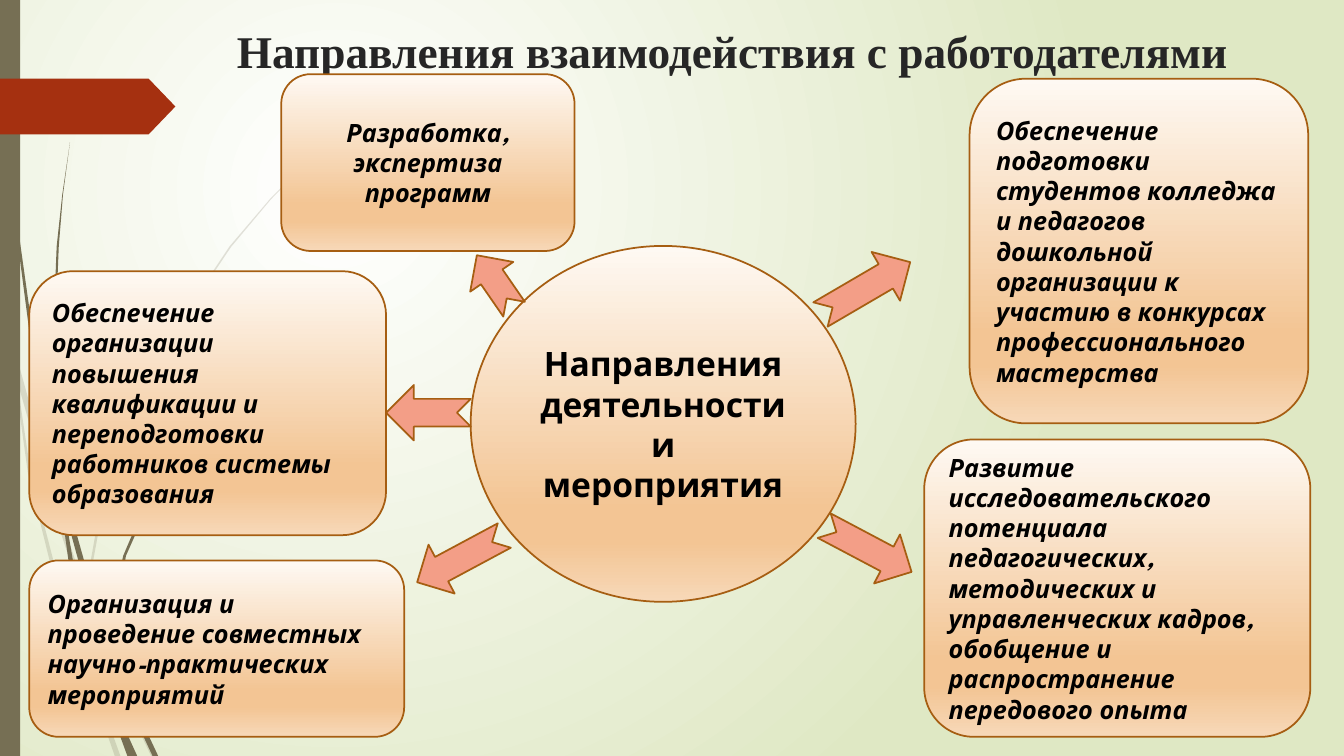
from lxml.etree import SubElement
from pptx import Presentation
from pptx.dml.color import RGBColor as RGB
from pptx.enum.shapes import MSO_SHAPE as Shape
from pptx.enum.text import MSO_ANCHOR as Anchor, PP_ALIGN as Align
from pptx.oxml.ns import qn
from pptx.util import Pt

THEME = {
    "olive": "766F54", "red": "A53010", "salmon": "F39E87", "edge": "A65E12",
    "sky": [(0, "FFFFFF"), (100, "DFE8C4")],
    "peach": [(0, "FEF9F3"), (74, "F3C594"), (83, "F3C594"), (100, "F7D8B8")],
    "head": {"name": "Times New Roman", "size": Pt(32.4), "bold": True},
    "hub": {"name": "League Spartan", "size": Pt(24), "bold": True},
    "card": {"name": "League Spartan", "size": Pt(18), "bold": True, "italic": True},
    "dark": "262626", "ink": "000000", "line": 1.25,
}

# Boxes are left, top, width, height in points.
TITLE = ("Направления взаимодействия с работодателями", (135.4, 13, 775.4, 53.3))
HUB = ("Направления деятельности и мероприятия", (336.2, 175.7, 275, 254.2))
CARDS = [
    ("Обеспечение организации повышения квалификации и переподготовки "
     "работников системы образования", (20.9, 193.7, 254.9, 188.6), Align.LEFT),
    ("Организация и проведение совместных научно-практических мероприятий",
     (20.9, 400.3, 267.8, 126), Align.LEFT),
    ("Развитие исследовательского потенциала педагогических, методических и "
     "управленческих кадров, обобщение и распространение передового опыта",
     (660.2, 313.9, 275.8, 212.4), Align.LEFT),
    ("Обеспечение подготовки студентов колледжа и педагогов дошкольной "
     "организации к участию в конкурсах профессионального мастерства",
     (692.6, 56.2, 241.9, 246.2), Align.LEFT),
    ("Разработка, экспертиза программ", (200.9, 53, 209.5, 126.3), Align.CENTER),
]
ARROWS = [
    ((581, 185.8, 74.2, 40.3), 329.7),
    ((293.8, 379.4, 70.6, 39.6), 151.8),
    ((275.8, 275, 60.5, 39.6), 180),
    ((330.5, 182.9, 46.8, 37.4), 235.4),
    ((584.6, 372.2, 70.6, 39.6), 27.9),
]
BAR = (0, 0, 14.4, 540)
FLAG = (0, 56.2, 125.3, 39.8)

# Outlines of the grass blades, in points.
FAINT = [
    [(0, 203), (6.5, 232), (8, 252), (7, 248), (0, 215)],
    [(8, 252), (20, 338), (47, 447), (66, 499), (73, 514), (82, 540), (86, 540),
     (76, 512), (67, 492), (50, 446), (22, 338), (12, 271)],
    [(10, 248), (12, 271), (42, 376), (60, 431), (63, 439), (89, 500), (108, 540),
     (112, 540), (91, 498), (66, 437), (45, 374)],
    [(60, 431), (63, 465), (67, 492), (76, 512), (66, 465), (63, 439)],
    [(61, 422), (77, 332), (114, 251), (164, 176), (193, 142), (225, 110),
     (193.5, 142.5), (165, 176.5), (115, 251), (79, 333), (63, 420), (63, 429)],
]
SOLID = [
    [(2, 0), (5, 79), (12, 168), (23.5, 256), (40, 343), (41, 346), (39.5, 326),
     (26, 256), (13.5, 167), (6, 78.5), (3, 0)],
    [(43, 340), (46, 364), (63, 426), (76, 464), (80, 472), (95, 510), (109, 540),
     (113, 540), (98, 508), (81, 467), (67, 425)],
    [(41, 343), (49, 401), (67, 474), (80, 510), (91, 540), (98, 540), (88, 518),
     (79, 498), (71, 473), (52, 400), (46, 364)],
    [(43, 340), (42, 326), (39, 251), (42, 176), (45, 139), (50, 101.5),
     (44.5, 139), (40.5, 176), (37.5, 251), (39.5, 323)],
    [(76, 454), (88, 397), (112, 341), (147, 292), (166, 269), (188, 248),
     (166.5, 269.5), (148, 292), (114, 343), (90, 397), (80, 456), (79, 461)],
    [(76, 464), (79, 498), (88, 518), (80, 472), (79, 461), (76, 454)],
]


def blend(fill, node, stops):
    """Give a fill the listed stops, running downwards; return its XML."""
    fill.gradient()
    grad = next(node.iter(qn("a:gradFill")))
    for part in list(grad):
        grad.remove(part)
    row = SubElement(grad, qn("a:gsLst"))
    for pos, tint in stops:
        stop = SubElement(row, qn("a:gs"), pos=str(pos * 1000))
        SubElement(stop, qn("a:srgbClr"), val=tint)
    SubElement(grad, qn("a:lin"), ang="5400000", scaled="0")
    return grad


def glow(slide):
    """Light the background from its upper left."""
    grad = blend(slide.background.fill, slide.element, THEME["sky"])
    grad.remove(grad.find(qn("a:lin")))
    way = SubElement(grad, qn("a:path"), {"path": "circle"})
    SubElement(way, qn("a:fillToRect"), l="50000", t="50000", r="100000", b="100000")


def paint(shape, tint, edge=None):
    shape.shadow.inherit = False
    if isinstance(tint, list):
        blend(shape.fill, shape.element, tint)
    else:
        shape.fill.solid()
        shape.fill.fore_color.rgb = RGB.from_string(tint)
    if edge:
        shape.line.color.rgb = RGB.from_string(edge)
        shape.line.width = Pt(THEME["line"])
    else:
        shape.line.fill.background()


def draw(slide, kind, box, tint, edge=None):
    shape = slide.shapes.add_shape(kind, *map(Pt, box))
    paint(shape, tint, edge)
    return shape


def write(shape, text, style, tint, align, anchor=Anchor.MIDDLE):
    frame = shape.text_frame
    frame.word_wrap = True
    frame.vertical_anchor = anchor
    para = frame.paragraphs[0]
    para.alignment = align
    run = para.add_run()
    run.text = text
    for key, value in style.items():
        setattr(run.font, key, value)
    run.font.color.rgb = RGB.from_string(tint)


def blade(slide, dots, alpha=None):
    pen = slide.shapes.build_freeform(Pt(dots[0][0]), Pt(dots[0][1]))
    pen.add_line_segments([(Pt(x), Pt(y)) for x, y in dots[1:]])
    shape = pen.convert_to_shape()
    paint(shape, THEME["olive"])
    if alpha:
        tint = next(shape.element.spPr.iter(qn("a:srgbClr")))
        SubElement(tint, qn("a:alpha"), val=str(alpha * 1000))


def main():
    deck = Presentation()
    deck.slide_width, deck.slide_height = Pt(960), Pt(540)
    slide = deck.slides.add_slide(deck.slide_layouts[6])
    glow(slide)
    for dots in FAINT:
        blade(slide, dots, 20)
    for dots in SOLID:
        blade(slide, dots)
    draw(slide, Shape.RECTANGLE, BAR, THEME["olive"])
    flag = draw(slide, Shape.PENTAGON, FLAG, THEME["red"])
    flag.adjustments[0] = 0.48

    text, box = TITLE
    head = slide.shapes.add_textbox(*map(Pt, box))
    write(head, text, THEME["head"], THEME["dark"], Align.CENTER, Anchor.TOP)
    text, box = HUB
    hub = draw(slide, Shape.OVAL, box, THEME["peach"], THEME["edge"])
    write(hub, text, THEME["hub"], THEME["ink"], Align.CENTER)
    for text, box, align in CARDS:
        card = draw(slide, Shape.ROUNDED_RECTANGLE, box, THEME["peach"], THEME["edge"])
        write(card, text, THEME["card"], THEME["ink"], align)
    for box, turn in ARROWS:
        arrow = draw(slide, Shape.NOTCHED_RIGHT_ARROW, box, THEME["salmon"], THEME["edge"])
        arrow.rotation = turn
    deck.save("out.pptx")


if __name__ == "__main__":
    main()
